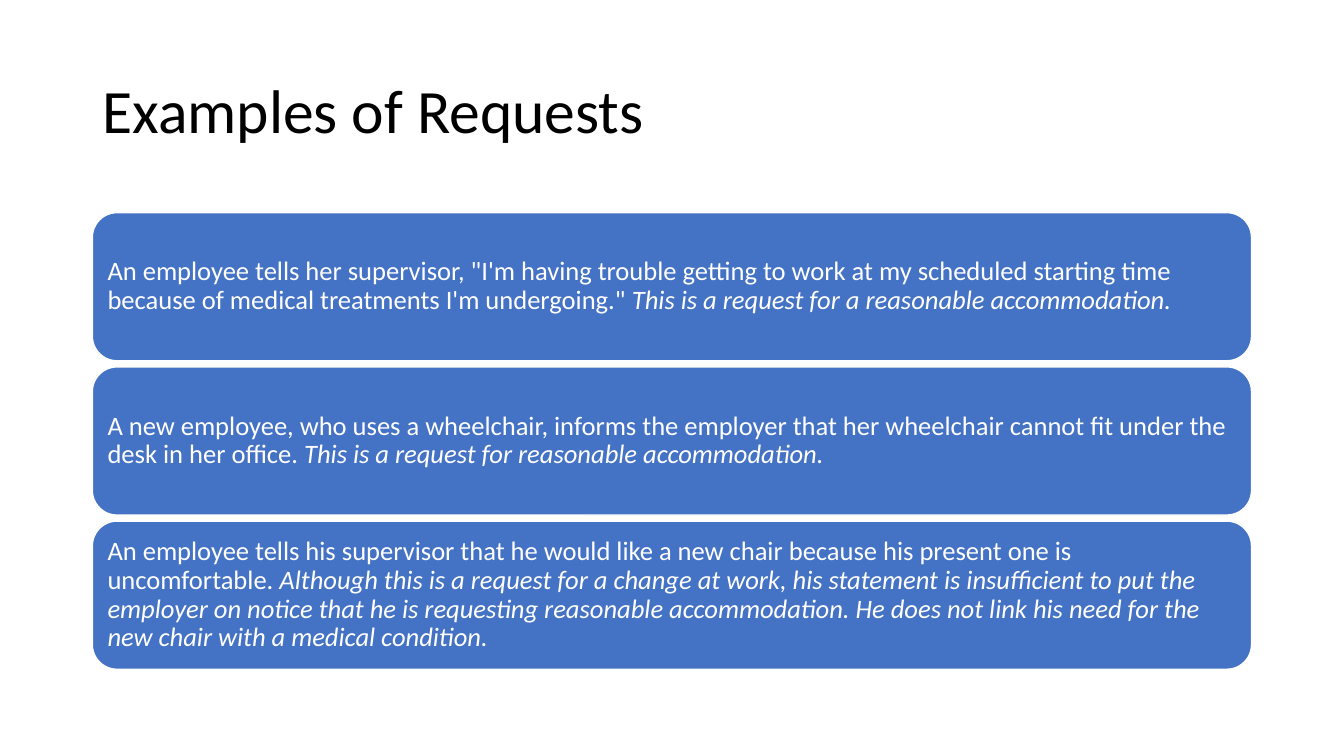
from pptx import Presentation
from pptx.dml.color import RGBColor
from pptx.enum.shapes import MSO_SHAPE
from pptx.enum.text import MSO_ANCHOR, MSO_AUTO_SIZE, PP_ALIGN
from pptx.util import Pt

ROUNDED = MSO_SHAPE.ROUNDED_RECTANGLE
MIDDLE = MSO_ANCHOR.MIDDLE
LEFT = PP_ALIGN.LEFT
NO_FIT = MSO_AUTO_SIZE.NONE
TITLE_ONLY = 5

MARGIN_LEFT = 66
CONTENT_WIDTH = 828
CARD_TOP = 151.92
CARD_HEIGHT = 105.84
CARD_STEP = 110.16

EXAMPLES = [
    (
        "An employee tells her supervisor, \"I'm having trouble getting to work at my "
        "scheduled starting time because of medical treatments I'm undergoing.\" ",
        "This is a request for a reasonable accommodation.",
    ),
    (
        "A new employee, who uses a wheelchair, informs the employer that her "
        "wheelchair cannot fit under the desk in her office. ",
        "This is a request for reasonable accommodation.",
    ),
    (
        "An employee tells his supervisor that he would like a new chair because "
        "his present one is uncomfortable. ",
        "Although this is a request for a change at work, his statement is insufficient "
        "to put the employer on notice that he is requesting reasonable accommodation. "
        "He does not link his need for the new chair with a medical condition.",
    ),
]


def color(value):
    return RGBColor.from_string(value)


def apply_format(target, values):
    for name, value in values.items():
        setattr(target, name, value)


class SlideBuilder:
    font = "Calibri"
    title_color = "000000"
    card_color = "4472C4"
    light_color = "FFFFFF"

    def __init__(self, slide):
        self.slide = slide

    def fill_text(self, shape, runs, size, text_color, inset):
        frame = shape.text_frame
        margins = dict.fromkeys(
            ("margin_left", "margin_right", "margin_top", "margin_bottom"), Pt(inset))
        apply_format(frame, {"word_wrap": True, "auto_size": NO_FIT,
                             "vertical_anchor": MIDDLE, **margins})
        paragraph = frame.paragraphs[0]
        apply_format(paragraph, {"alignment": LEFT, "line_spacing": 0.9})
        for text, italic in runs:
            run = paragraph.add_run()
            run.text = text
            apply_format(run.font, {"name": self.font, "size": Pt(size), "italic": italic})
            run.font.color.rgb = color(text_color)

    def title(self, text, top, height):
        shape = self.slide.shapes.title
        apply_format(shape, {"left": Pt(MARGIN_LEFT), "top": Pt(top),
                             "width": Pt(CONTENT_WIDTH), "height": Pt(height)})
        self.fill_text(shape, [(text, False)], 44, self.title_color, 7.2)

    def card(self, top, statement, verdict):
        shape = self.slide.shapes.add_shape(
            ROUNDED, Pt(MARGIN_LEFT), Pt(top), Pt(CONTENT_WIDTH), Pt(CARD_HEIGHT))
        shape.shadow.inherit = False
        shape.fill.solid()
        shape.fill.fore_color.rgb = color(self.card_color)
        shape.line.color.rgb = color(self.light_color)
        shape.line.width = Pt(1)
        runs = [(statement, False), (verdict, True)]
        self.fill_text(shape, runs, 19, self.light_color, 5.7)


def main():
    presentation = Presentation()
    apply_format(presentation, {"slide_width": Pt(960), "slide_height": Pt(540)})
    slide = presentation.slides.add_slide(presentation.slide_layouts[TITLE_ONLY])
    builder = SlideBuilder(slide)
    builder.title("Examples of Requests", 28.75, 104.4)
    for index, (statement, verdict) in enumerate(EXAMPLES):
        builder.card(CARD_TOP + index * CARD_STEP, statement, verdict)
    presentation.save("out.pptx")


if __name__ == "__main__":
    main()
